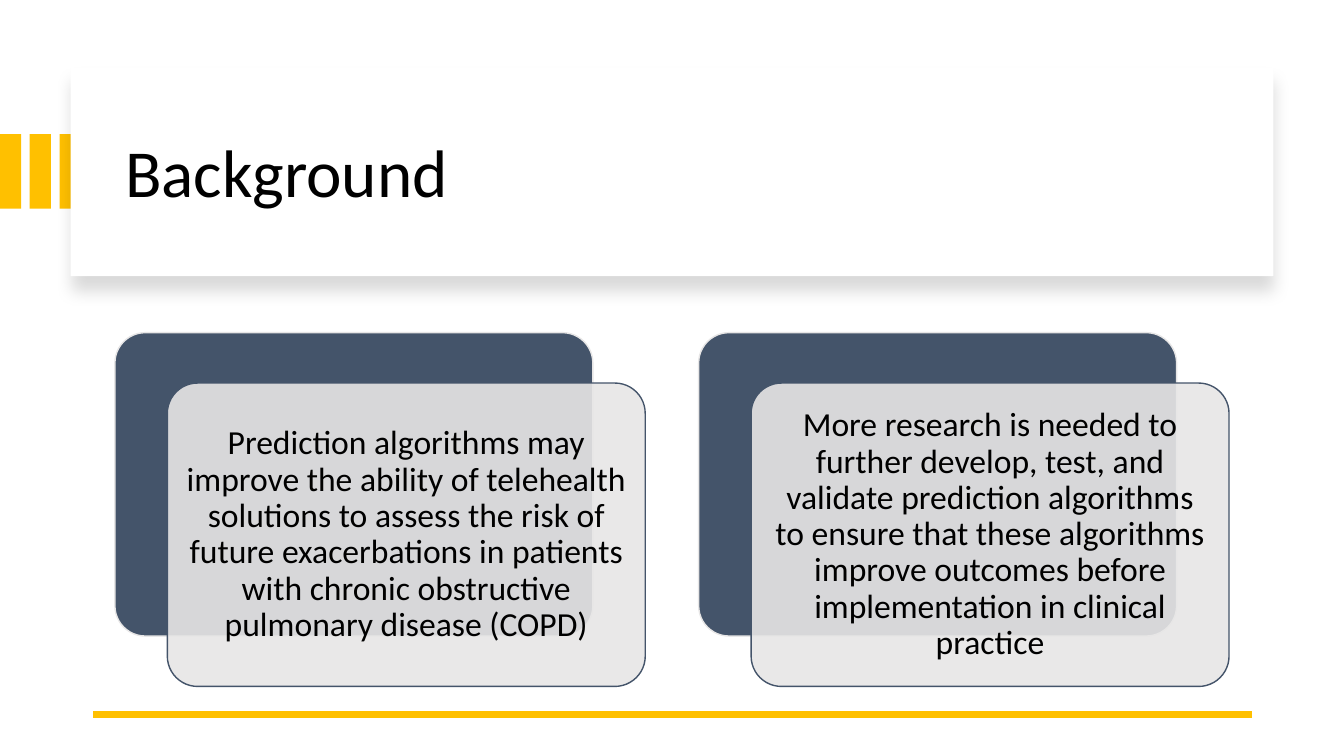
from lxml.etree import SubElement
from pptx import Presentation
from pptx.dml.color import RGBColor
from pptx.enum.shapes import MSO_CONNECTOR, MSO_SHAPE
from pptx.enum.text import MSO_ANCHOR, PP_ALIGN
from pptx.oxml.ns import qn
from pptx.util import Inches, Pt

WHITE = RGBColor(0xFF, 0xFF, 0xFF)
BLACK = RGBColor(0x00, 0x00, 0x00)
GOLD = RGBColor(0xFF, 0xC0, 0x00)
SLATE = RGBColor(0x44, 0x54, 0x6A)
GREY = RGBColor(0xE7, 0xE6, 0xE6)

CARDS = [
    "Prediction algorithms may improve the ability of telehealth solutions to assess "
    "the risk of future exacerbations in patients with chronic obstructive pulmonary "
    "disease (COPD)",
    "More research is needed to further develop, test, and validate prediction "
    "algorithms to ensure that these algorithms improve outcomes before "
    "implementation in clinical practice",
]


def set_text(sp, text, size, align=PP_ALIGN.LEFT, inset_y=0.05):
    tf = sp.text_frame
    tf.word_wrap = True
    tf.vertical_anchor = MSO_ANCHOR.MIDDLE
    tf.margin_left = tf.margin_right = Inches(0.1)
    tf.margin_top = tf.margin_bottom = Inches(inset_y)
    p = tf.paragraphs[0]
    p.alignment = align
    p.line_spacing = 0.9
    r = p.add_run()
    r.text = text
    r.font.name = "Calibri"
    r.font.size = Pt(size)
    r.font.color.rgb = BLACK


def add_box(s, kind, x, y, w, h, fill, line=None):
    sp = s.shapes.add_shape(kind, Inches(x), Inches(y), Inches(w), Inches(h))
    sp.shadow.inherit = False
    sp.fill.solid()
    sp.fill.fore_color.rgb = fill
    if line is None:
        sp.line.fill.background()
    else:
        sp.line.color.rgb = line
        sp.line.width = Pt(1)
    if kind == MSO_SHAPE.ROUNDED_RECTANGLE:
        sp.adjustments[0] = 0.1
    return sp


def set_alpha(color, percent):
    SubElement(color, qn("a:alpha"), val=str(percent * 1000))


def add_drop_shadow(sp, blur, dist, angle, percent):
    effects = sp._element.spPr.find(qn("a:effectLst"))
    shadow = SubElement(effects, qn("a:outerShdw"), blurRad=str(Pt(blur)),
                        dist=str(Pt(dist)), dir=str(angle * 60000),
                        algn="t", rotWithShape="0")
    set_alpha(SubElement(shadow, qn("a:srgbClr"), val=str(BLACK)), percent)


def add_header(s, x, y, w, h, title):
    for i in range(3):
        add_box(s, MSO_SHAPE.RECTANGLE, i * 0.295, y + 0.66, 0.21, 0.74, GOLD)
    panel = add_box(s, MSO_SHAPE.RECTANGLE, x, y, w, h, WHITE)
    add_drop_shadow(panel, blur=11, dist=10, angle=90, percent=15)
    sp = s.shapes.title
    panel._element.addnext(sp._element)
    sp.left, sp.top = Inches(x + 0.44), Inches(y + 0.22)
    sp.width, sp.height = Inches(w - 0.8), Inches(1.7)
    set_text(sp, title, 48)


def add_card(s, x, y, w, h, text):
    shift_x, shift_y = 0.52, 0.5
    size = w - shift_x, h - shift_y
    add_box(s, MSO_SHAPE.ROUNDED_RECTANGLE, x, y, *size, SLATE, GREY)
    front = add_box(s, MSO_SHAPE.ROUNDED_RECTANGLE, x + shift_x, y + shift_y,
                    *size, GREY, SLATE)
    set_alpha(front._element.spPr.find(qn("a:solidFill"))[0], 90)
    set_text(front, text, 24, PP_ALIGN.CENTER, inset_y=0.1)


def add_rule(s, x, y, w):
    line = s.shapes.add_connector(MSO_CONNECTOR.STRAIGHT, Inches(x + w), Inches(y),
                                  Inches(x), Inches(y))
    line.line.color.rgb = GOLD
    line.line.width = Pt(4.5)
    SubElement(line._element.spPr, qn("a:effectLst"))


def main():
    prs = Presentation()
    prs.slide_width, prs.slide_height = Inches(13.33), Inches(7.5)
    s = prs.slides.add_slide(prs.slide_layouts[5])
    s.background.fill.solid()
    s.background.fill.fore_color.rgb = WHITE
    add_header(s, 0.7, 0.67, 11.93, 2.07, "Background")
    add_rule(s, 0.92, 7.09, 11.5)
    for i, text in enumerate(CARDS):
        add_card(s, 1.14 + i * 5.79, 3.3, 5.26, 3.51, text)
    prs.save("out.pptx")


if __name__ == "__main__":
    main()
